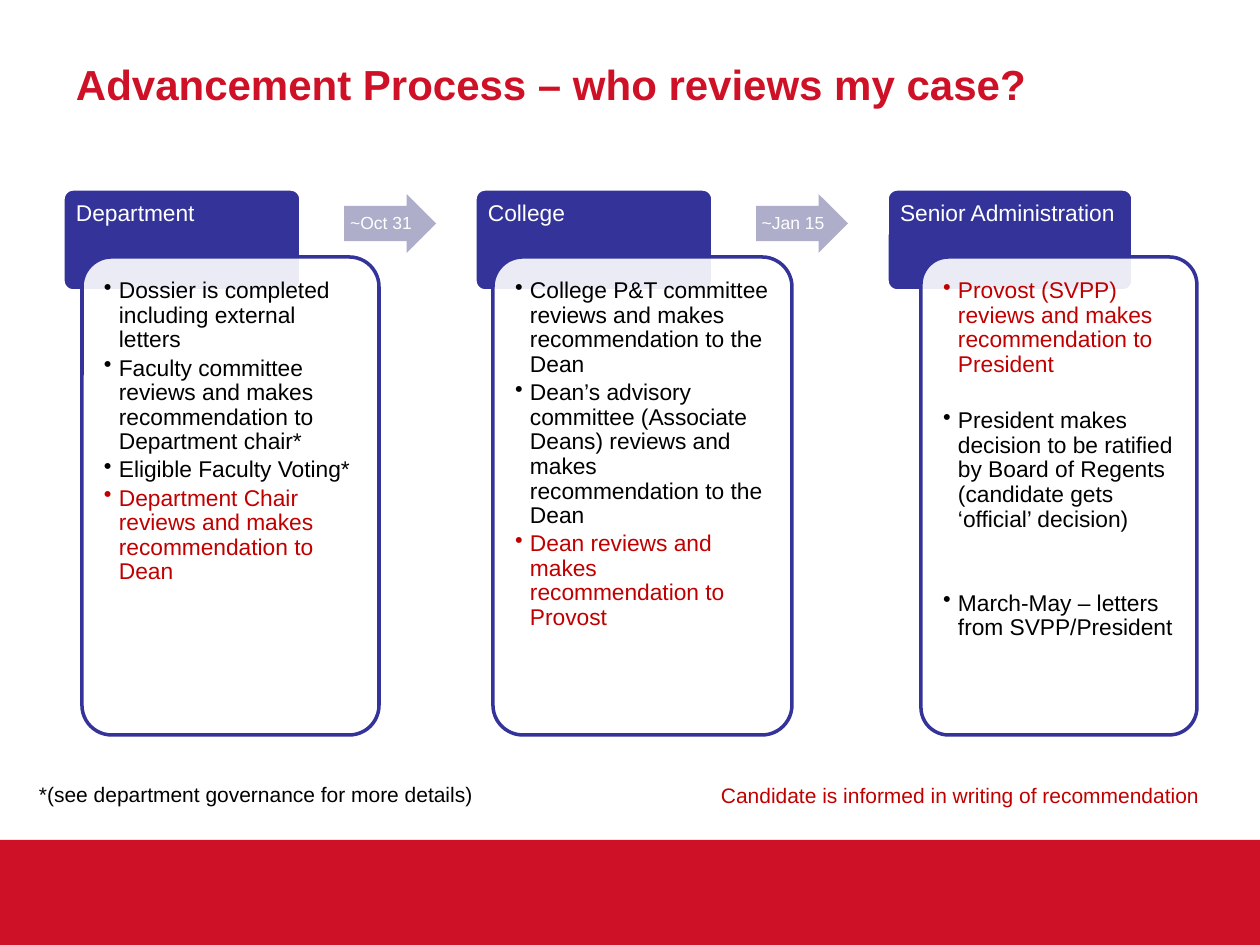
from lxml import etree
from pptx import Presentation
from pptx.dml.color import RGBColor
from pptx.enum.shapes import MSO_SHAPE
from pptx.enum.text import MSO_ANCHOR, PP_ALIGN
from pptx.oxml.ns import qn
from pptx.util import Pt

RECT = MSO_SHAPE.RECTANGLE
ROUND = MSO_SHAPE.ROUNDED_RECTANGLE
ARROW = MSO_SHAPE.RIGHT_ARROW
TOP, MIDDLE = MSO_ANCHOR.TOP, MSO_ANCHOR.MIDDLE
LEFT, CENTER = PP_ALIGN.LEFT, PP_ALIGN.CENTER
RED, BLUE, PALE = "CE1126", "333399", "AEAECA"
WHITE, BLACK, DARK = "FFFFFF", "000000", "C00000"
FONT = "Arial"
SCALE = 914400 / 126
PITCH = 412

# Each step: title, header width, card left, card width, items (text, colour, space before).
STEPS = [
    ("Department", 238, 19, 297, [
        ("Dossier is completed including external letters", BLACK, 0),
        ("Faculty committee reviews and makes recommendation to Department chair*", BLACK, 0),
        ("Eligible Faculty Voting*", BLACK, 0),
        ("Department Chair reviews and makes recommendation to Dean", DARK, 0)]),
    ("College", 238, 18, 299, [
        ("College P&T committee reviews and makes recommendation to the Dean", BLACK, 0),
        ("Dean’s advisory committee (Associate Deans) reviews and makes "
         "recommendation to the Dean", BLACK, 0),
        ("Dean reviews and makes recommendation to Provost", DARK, 0)]),
    ("Senior Administration", 246, 34, 276, [
        ("Provost (SVPP) reviews and makes recommendation to President", DARK, 0),
        ("President makes decision to be ratified by Board of Regents "
         "(candidate gets ‘official’ decision)", BLACK, 16),
        ("March-May – letters from SVPP/President", BLACK, 32)]),
]
DATES = ["~Oct 31", "~Jan 15"]


def px(n):
    """Turn pixels into EMU."""
    return round(n * SCALE)


def color(code):
    """Turn a hex string into a colour."""
    return RGBColor.from_string(code)


def shape(slide, kind, box, fill, line=None, adj=(), alpha=None):
    """Draw a filled preset shape in a box."""
    item = slide.shapes.add_shape(kind, *map(px, box))
    item.shadow.inherit = False
    item.fill.solid()
    item.fill.fore_color.rgb = color(fill)
    if alpha:
        tint = item.fill._xPr.find(qn("a:solidFill"))[0]
        etree.SubElement(tint, qn("a:alpha")).set("val", str(alpha * 1000))
    if line:
        item.line.color.rgb = color(line)
        item.line.width = Pt(2)
    else:
        item.line.fill.background()
    for i, part in enumerate(adj):
        item.adjustments[i] = part


def frame(slide, box, pads=(13, 6, 13, 6), anchor=TOP):
    """Add a wrapping text box and return its frame."""
    text = slide.shapes.add_textbox(*map(px, box)).text_frame
    text.word_wrap = True
    text.vertical_anchor = anchor
    (text.margin_left, text.margin_top,
     text.margin_right, text.margin_bottom) = map(px, pads)
    return text


def style(para, size, code, bold=False, align=LEFT, space=None):
    """Format a paragraph and its runs."""
    para.alignment = align
    if space:
        para.line_spacing = space
    for run in para.runs:
        font = run.font
        font.name, font.size, font.bold = FONT, Pt(size), bold
        font.color.rgb = color(code)


def label(slide, box, text, size, code, pads=(13, 6, 13, 6), anchor=TOP, **look):
    """Write one line of text in a box."""
    para = frame(slide, box, pads, anchor).paragraphs[0]
    para.text = text
    style(para, size, code, **look)


def bullet(para):
    """Give a paragraph a hanging bullet."""
    props = para._p.get_or_add_pPr()
    props.set("marL", str(px(15)))
    props.set("indent", str(-px(15)))
    etree.SubElement(props, qn("a:buChar")).set("char", "•")


def points(slide, box, items):
    """Write a bulleted list in a box."""
    text = frame(slide, box, (13, 13, 13, 13))
    for i, (words, code, before) in enumerate(items):
        para = text.add_paragraph() if i else text.paragraphs[0]
        para.text = words
        bullet(para)
        if before:
            para.space_before = Pt(before)
        para.space_after = Pt(2)
        style(para, 13, code, space=0.9)


def column(slide, left, top, step):
    """Draw one review step: header tab, card and list."""
    title, wide, shift, width, items = step
    shape(slide, ROUND, (left, top, wide, 102), BLUE, WHITE, [0.1])
    label(slide, (left, top, wide, 68), title, 13, WHITE, (13, 13, 13, 6), space=0.9)
    x, y, high = left + shift, top + 68, 478
    shape(slide, ROUND, (x, y, width, high), WHITE, BLUE, [0.1], 90)
    points(slide, (x + 9, y + 9, width - 18, high - 18), items)


def arrow(slide, left, top, date):
    """Draw a dated arrow between two steps."""
    shape(slide, ARROW, (left, top, 92, 59), PALE, adj=[0.6, 0.5])
    label(slide, (left, top + 12, 74, 35), date, 10, WHITE, (0, 0, 0, 0), MIDDLE,
          align=CENTER, space=0.9)


def flow(slide, left, top):
    """Lay out the steps and the arrows between them."""
    for i, step in enumerate(STEPS):
        column(slide, left + i * PITCH, top, step)
    for i, date in enumerate(DATES):
        arrow(slide, left + 281 + i * PITCH, top + 5, date)


def notes(slide, top):
    """Write the two remarks under the steps."""
    label(slide, (26, top, 533, 38), "*(see department governance for more details)",
          12, BLACK)
    label(slide, (708, top + 1, 552, 38),
          "Candidate is informed in writing of recommendation", 12, DARK)


def main():
    """Build and save the slide."""
    deck = Presentation()
    deck.slide_width, deck.slide_height = px(1260), px(945)
    slide = deck.slides.add_slide(deck.slide_layouts[6])
    shape(slide, RECT, (0, 840, 1260, 105), RED)
    label(slide, (63, 21, 1134, 126), "Advancement Process – who reviews my case?",
          24, RED, anchor=MIDDLE, bold=True)
    flow(slide, 63, 189)
    notes(slide, 776)
    deck.save("out.pptx")


if __name__ == "__main__":
    main()
